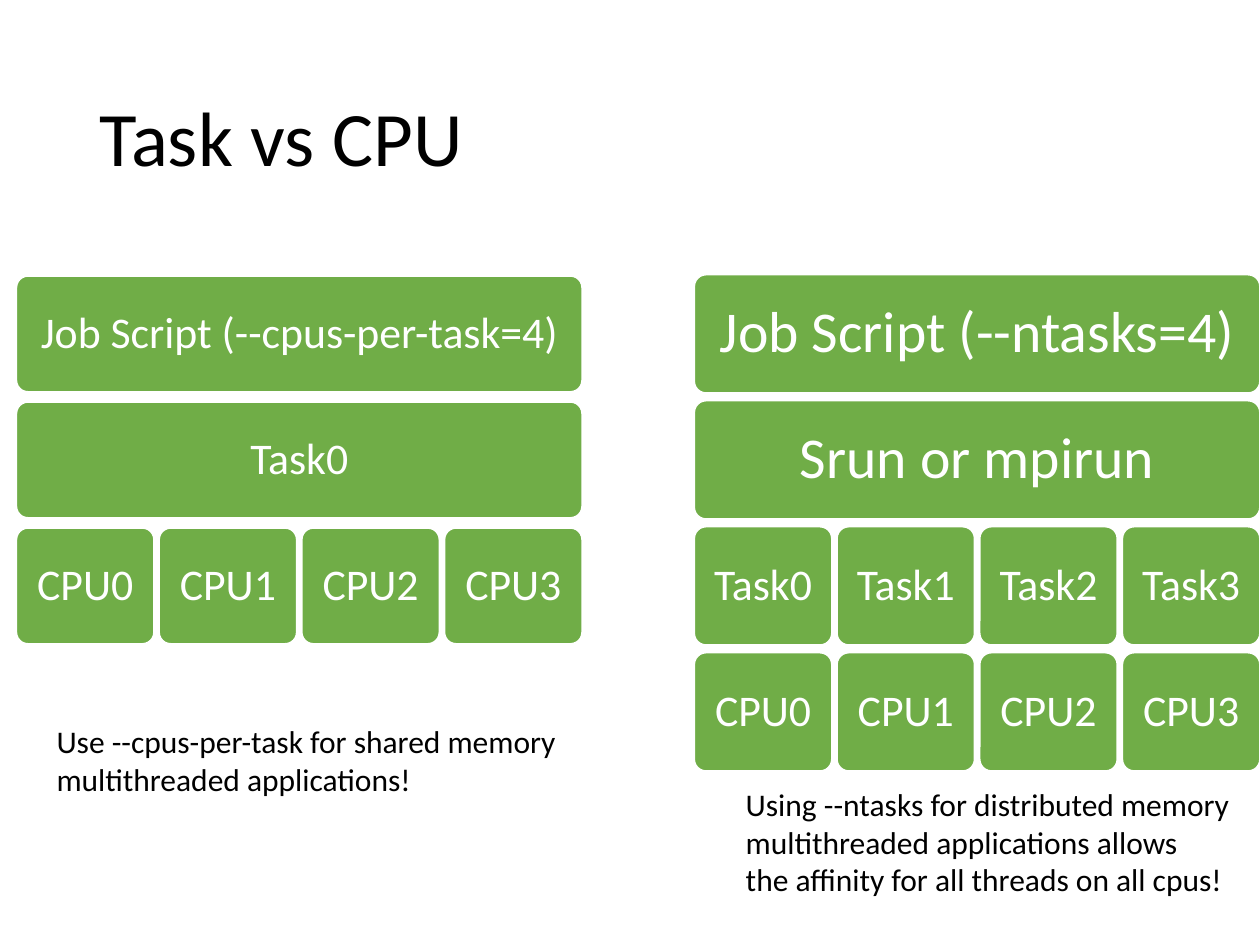
from pptx import Presentation
from pptx.dml.color import RGBColor
from pptx.enum.shapes import MSO_SHAPE
from pptx.enum.text import MSO_ANCHOR, MSO_AUTO_SIZE, PP_ALIGN
from pptx.util import Inches, Pt

ROUNDED = MSO_SHAPE.ROUNDED_RECTANGLE
MIDDLE = MSO_ANCHOR.MIDDLE
LEFT, CENTER = PP_ALIGN.LEFT, PP_ALIGN.CENTER
GROW = MSO_AUTO_SIZE.SHAPE_TO_FIT_TEXT

BLACK = RGBColor(0x00, 0x00, 0x00)
WHITE = RGBColor(0xFF, 0xFF, 0xFF)
GREEN = RGBColor(0x70, 0xAD, 0x47)

FONT = "Calibri"
TITLE_ONLY = 5
STACK_W = 4.49
COL_GAP = 0.04
ROW_PITCH = 1.0


class SlideBuilder:
    def __init__(self, prs):
        self.s = prs.slides.add_slide(prs.slide_layouts[TITLE_ONLY])

    def set_text(self, tf, text, size, color, align=LEFT, spacing=1.0):
        tf.text = text
        for p in tf.paragraphs:
            p.alignment = align
            p.line_spacing = spacing
            for r in p.runs:
                r.font.name = FONT
                r.font.size = Pt(size)
                r.font.color.rgb = color

    def title(self, text, x, y, w, h):
        sp = self.s.shapes.title
        sp.left, sp.top = Inches(x), Inches(y)
        sp.width, sp.height = Inches(w), Inches(h)
        sp.text_frame.vertical_anchor = MIDDLE
        self.set_text(sp.text_frame, text, 44, BLACK, spacing=0.9)

    def block(self, text, x, y, w, h, size, margin):
        sp = self.s.shapes.add_shape(ROUNDED, Inches(x), Inches(y), Inches(w), Inches(h))
        sp.adjustments[0] = 0.1
        sp.shadow.inherit = False
        sp.fill.solid()
        sp.fill.fore_color.rgb = GREEN
        sp.line.color.rgb = WHITE
        sp.line.width = Pt(1)
        tf = sp.text_frame
        tf.word_wrap = True
        tf.vertical_anchor = MIDDLE
        tf.margin_left = tf.margin_right = Inches(margin)
        tf.margin_top = tf.margin_bottom = Inches(margin)
        self.set_text(tf, text, size, WHITE, CENTER, 0.9)

    def stack(self, rows, x, y, h, wide_size, wide_margin):
        """Draw rows of blocks, each row sharing the full stack width equally."""
        for i, row in enumerate(rows):
            w = (STACK_W - COL_GAP * (len(row) - 1)) / len(row)
            size, margin = (wide_size, wide_margin) if len(row) == 1 else (25, 0.12)
            for j, text in enumerate(row):
                self.block(text, x + j * (w + COL_GAP), y + i * ROW_PITCH, w, h, size, margin)

    def note(self, text, x, y, w, h):
        tb = self.s.shapes.add_textbox(Inches(x), Inches(y), Inches(w), Inches(h))
        tf = tb.text_frame
        tf.word_wrap = False
        tf.auto_size = GROW
        self.set_text(tf, text, 18, BLACK)


def main():
    prs = Presentation()
    prs.slide_width, prs.slide_height = Inches(10), Inches(7.5)
    slide = SlideBuilder(prs)
    slide.title("Task vs CPU", 0.69, 0.4, 7.41, 1.45)

    tasks = [f"Task{n}" for n in range(4)]
    cpus = [f"CPU{n}" for n in range(4)]
    slide.stack([["Job Script (--cpus-per-task=4)"], ["Task0"], cpus],
                0.13, 2.19, 0.92, 25, 0.12)
    slide.stack([["Job Script (--ntasks=4)"], ["Srun or mpirun"], tasks, cpus],
                5.51, 2.18, 0.94, 33, 0.16)

    slide.note("Use --cpus-per-task for shared memory\n"
               "multithreaded applications!", 0.35, 5.68, 4.21, 0.71)
    slide.note("Using --ntasks for distributed memory\n"
               "multithreaded applications allows\n"
               "the affinity for all threads on all cpus!", 5.82, 6.18, 4.08, 1.01)
    prs.save("out.pptx")


if __name__ == "__main__":
    main()
